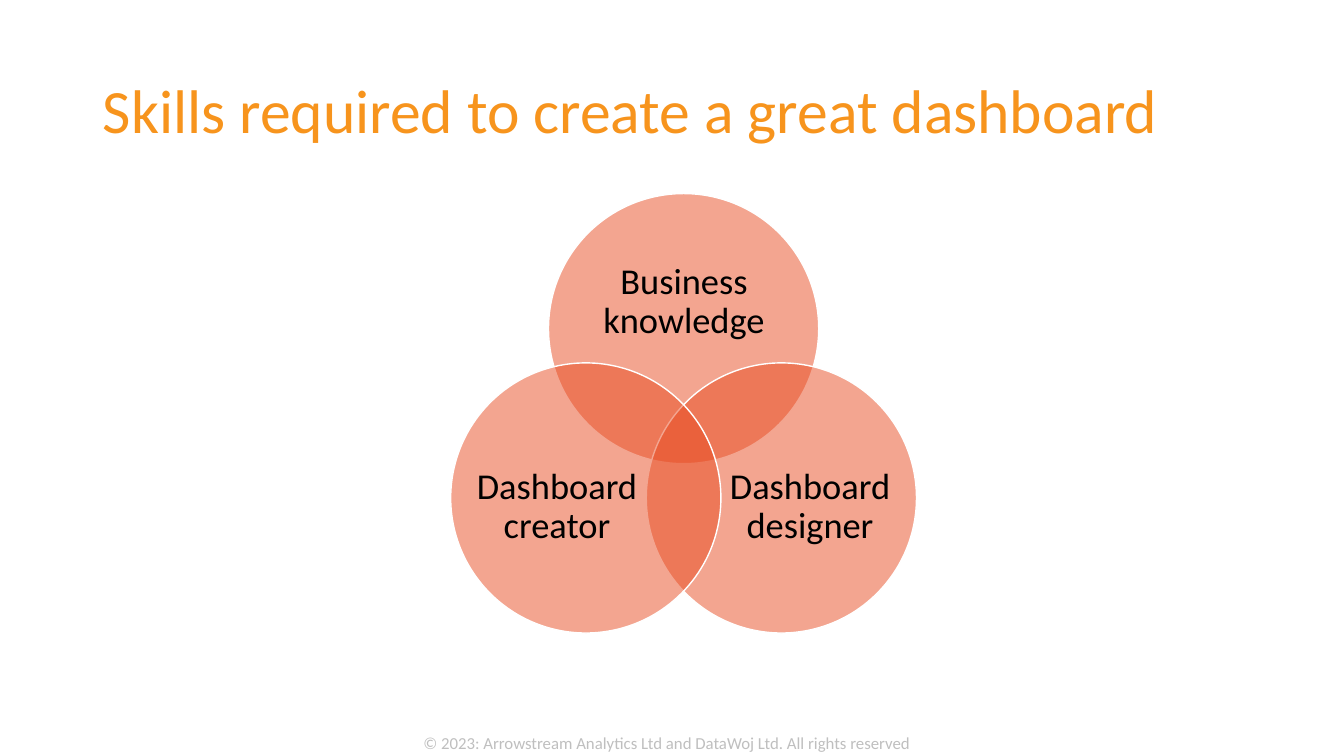
from math import cos, radians, sin

from lxml import etree
from pptx import Presentation
from pptx.dml.color import RGBColor
from pptx.enum.shapes import MSO_SHAPE
from pptx.enum.text import MSO_ANCHOR, MSO_AUTO_SIZE, PP_ALIGN
from pptx.oxml.ns import qn
from pptx.util import Inches, Pt

ORANGE = RGBColor(0xF7, 0x94, 0x1D)
RED = RGBColor(0xE8, 0x4C, 0x22)
WHITE = RGBColor(0xFF, 0xFF, 0xFF)
BLACK = RGBColor(0x00, 0x00, 0x00)
GREY = RGBColor(0xBF, 0xBF, 0xBF)
FONT = "Calibri"

# Skill, direction from the diagram centre in degrees, label box inside its circle
SKILLS = [
    ("Business knowledge", -90, (0.36, 0.47, 1.97, 1.21)),
    ("Dashboard designer", 30, (0.82, 0.69, 1.61, 1.48)),
    ("Dashboard creator", 150, (0.25, 0.69, 1.61, 1.48)),
]


def write(paragraph, text, size, color, alignment=PP_ALIGN.LEFT):
    paragraph.alignment = alignment
    run = paragraph.add_run()
    run.text = text
    run.font.name = FONT
    run.font.size = Pt(size)
    run.font.color.rgb = color


def place_title(slide, left, top, width, height):
    title = slide.shapes.title
    title.left, title.top = Inches(left), Inches(top)
    title.width, title.height = Inches(width), Inches(height)
    frame = title.text_frame
    frame.auto_size = MSO_AUTO_SIZE.NONE
    frame.vertical_anchor = MSO_ANCHOR.MIDDLE
    paragraph = frame.paragraphs[0]
    paragraph.line_spacing = 0.9
    write(paragraph, "Skills required to create a great dashboard", 44, ORANGE)


def add_circle(group, left, top, diameter):
    circle = group.shapes.add_shape(
        MSO_SHAPE.OVAL, Inches(left), Inches(top), Inches(diameter), Inches(diameter))
    circle.shadow.inherit = False
    circle.fill.solid()
    circle.fill.fore_color.rgb = RED
    circle.line.color.rgb = WHITE
    circle.line.width = Pt(1)
    # Half transparent, so that overlaps show
    color = circle.fill._xPr.find(qn("a:solidFill")).find(qn("a:srgbClr"))
    etree.SubElement(color, qn("a:alpha")).set("val", "50000")


def add_label(group, text, left, top, width, height):
    label = group.shapes.add_textbox(
        Inches(left), Inches(top), Inches(width), Inches(height))
    frame = label.text_frame
    frame.word_wrap = True
    frame.vertical_anchor = MSO_ANCHOR.MIDDLE
    frame.margin_left = frame.margin_right = 0
    frame.margin_top = frame.margin_bottom = 0
    paragraph = frame.paragraphs[0]
    paragraph.line_spacing = 0.9
    write(paragraph, text, 26, BLACK, PP_ALIGN.CENTER)


def add_venn(slide, center_x, center_y, diameter, offset):
    group = slide.shapes.add_group_shape()
    for skill, angle, (label_x, label_y, width, height) in SKILLS:
        left = center_x + offset * cos(radians(angle)) - diameter / 2
        top = center_y + offset * sin(radians(angle)) - diameter / 2
        add_circle(group, left, top, diameter)
        add_label(group, skill, left + label_x, top + label_y, width, height)


def add_copyright(slide, left, top, width, height):
    box = slide.shapes.add_textbox(
        Inches(left), Inches(top), Inches(width), Inches(height))
    frame = box.text_frame
    frame.word_wrap = False
    frame.auto_size = MSO_AUTO_SIZE.SHAPE_TO_FIT_TEXT
    write(frame.paragraphs[0],
          "© 2023: Arrowstream Analytics Ltd and DataWoj Ltd. All rights reserved",
          12, GREY)


def main():
    presentation = Presentation()
    presentation.slide_width = Inches(13.33)
    presentation.slide_height = Inches(7.5)
    title_only = presentation.slide_layouts[5]
    slide = presentation.slides.add_slide(title_only)

    # Title
    place_title(slide, 0.92, 0.4, 11.5, 1.45)
    # Venn diagram of the three skills
    add_venn(slide, center_x=6.78, center_y=4.38, diameter=2.68, offset=1.12)
    # Copyright line
    add_copyright(slide, 4.1, 7.22, 5.13, 0.3)

    presentation.save("out.pptx")


if __name__ == "__main__":
    main()
